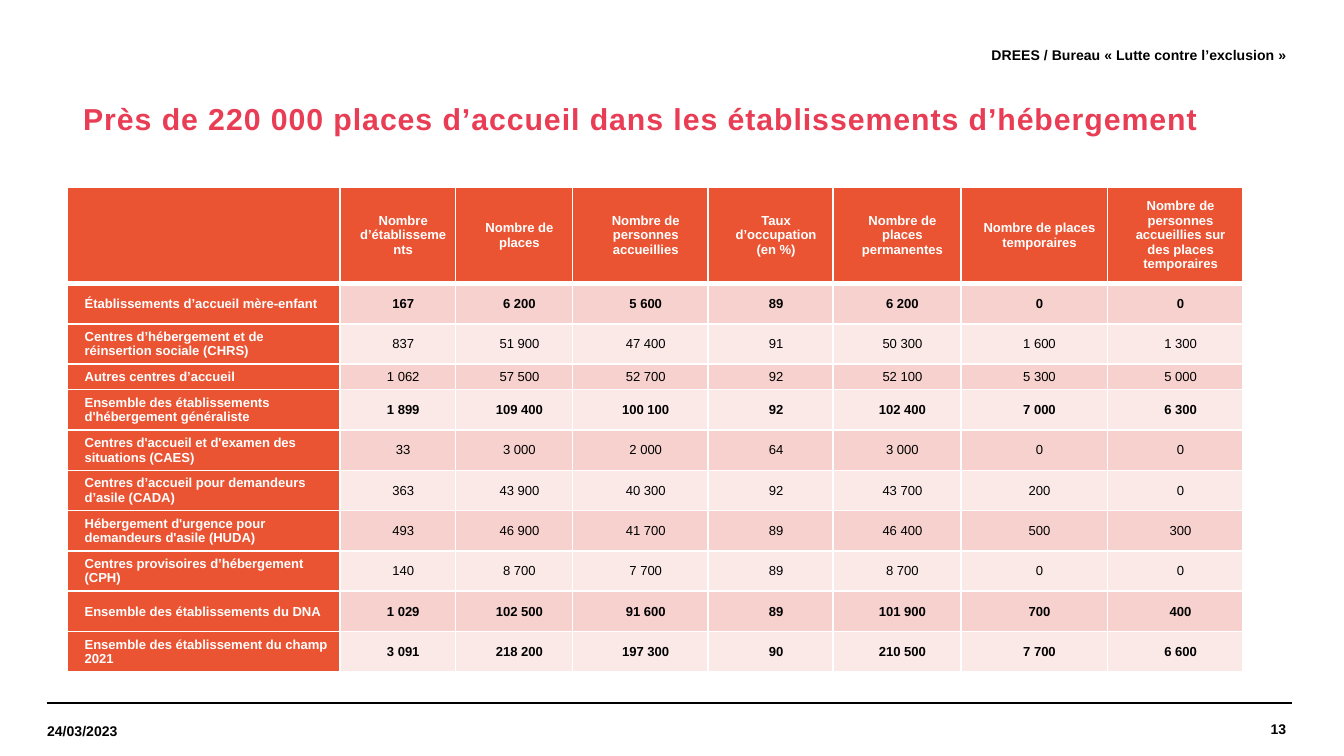
from lxml import etree
from pptx import Presentation
from pptx.dml.color import RGBColor
from pptx.enum.shapes import MSO_CONNECTOR
from pptx.enum.text import MSO_ANCHOR as Anchor, PP_ALIGN as Align
from pptx.oxml.ns import qn
from pptx.util import Inches, Pt

BLACK = RGBColor(0x00, 0x00, 0x00)
WHITE = RGBColor(0xFF, 0xFF, 0xFF)
RED = RGBColor(0xE8, 0x3D, 0x54)
ORANGE = RGBColor(0xEA, 0x54, 0x33)
BANDS = [RGBColor(0xF7, 0xD1, 0xCE), RGBColor(0xFB, 0xE9, 0xE8)]
FONT = "Arial"

COLUMN_WIDTHS = [2.03, 0.86, 0.87, 1.01, 0.93, 0.95, 1.09, 1.01]
HEADER_HEIGHT, ROW_HEIGHT, SHORT_ROW_HEIGHT = 0.72, 0.3, 0.19
SHORT_ROW = 3
HEADERS = [
    "", "Nombre d’établissements", "Nombre de places",
    "Nombre de personnes accueillies", "Taux d’occupation (en %)",
    "Nombre de places permanentes", "Nombre de places temporaires",
    "Nombre de personnes accueillies sur des places temporaires",
]
# Row label, values, and whether the values are bold
ROWS = [
    ("Établissements d’accueil mère-enfant",
     ["167", "6 200", "5 600", "89", "6 200", "0", "0"], True),
    ("Centres d’hébergement et de réinsertion sociale (CHRS)",
     ["837", "51 900", "47 400", "91", "50 300", "1 600", "1 300"], False),
    ("Autres centres d’accueil",
     ["1 062", "57 500", "52 700", "92", "52 100", "5 300", "5 000"], False),
    ("Ensemble des établissements d'hébergement généraliste",
     ["1 899", "109 400", "100 100", "92", "102 400", "7 000", "6 300"], True),
    ("Centres d'accueil et d'examen des situations (CAES)",
     ["33", "3 000", "2 000", "64", "3 000", "0", "0"], False),
    ("Centres d’accueil pour demandeurs d’asile (CADA)",
     ["363", "43 900", "40 300", "92", "43 700", "200", "0"], False),
    ("Hébergement d'urgence pour demandeurs d'asile (HUDA)",
     ["493", "46 900", "41 700", "89", "46 400", "500", "300"], False),
    ("Centres provisoires d’hébergement (CPH)",
     ["140", "8 700", "7 700", "89", "8 700", "0", "0"], False),
    ("Ensemble des établissements du DNA",
     ["1 029", "102 500", "91 600", "89", "101 900", "700", "400"], True),
    ("Ensemble des établissement du champ 2021",
     ["3 091", "218 200", "197 300", "90", "210 500", "7 700", "6 600"], True),
]


def write(paragraph, text, size, color, bold=True, align=Align.LEFT, indent=0):
    """Add one styled run to a paragraph."""
    paragraph.alignment = align
    paragraph._p.get_or_add_pPr().set("marL", str(Inches(indent)))
    run = paragraph.add_run()
    run.text = text
    run.font.name = FONT
    run.font.size = Pt(size)
    run.font.bold = bold
    run.font.color.rgb = color
    return run


def add_text_box(slide, left, top, width, height, margins=(0, 0)):
    """Add a wrapped, vertically centred box and return its paragraph."""
    shape = slide.shapes.add_textbox(
        Inches(left), Inches(top), Inches(width), Inches(height))
    frame = shape.text_frame
    frame.word_wrap = True
    frame.vertical_anchor = Anchor.MIDDLE
    frame.margin_left = frame.margin_right = Inches(margins[0])
    frame.margin_top = frame.margin_bottom = Inches(margins[1])
    return frame.paragraphs[0]


def add_title(slide, left, top, width, height):
    paragraph = add_text_box(slide, left, top, width, height, (0.1, 0.05))
    paragraph.line_spacing = 0.9
    run = write(
        paragraph,
        "Près de 220 000 places d’accueil dans les établissements d’hébergement",
        16.2, RED, indent=0.02)
    run.font._element.set("spc", "50")


def add_header(slide, left, top, width, height):
    paragraph = add_text_box(slide, left, top, width, height)
    write(paragraph, "DREES / Bureau « Lutte contre l’exclusion »", 7.5, BLACK,
          align=Align.RIGHT)


def add_footer(slide, left, top, width, height):
    # Two overlapping rules
    for offset in (0, 0.04):
        start = left + offset
        rule = slide.shapes.add_connector(
            MSO_CONNECTOR.STRAIGHT, Inches(start), Inches(top),
            Inches(start + width), Inches(top))
        rule.line.color.rgb = BLACK
        rule.line.width = Pt(0.8)
        etree.SubElement(rule._element.spPr, qn("a:effectLst"))
    # Date and page number
    date = add_text_box(slide, left, top + 0.02, 1.28, height - 0.01)
    write(date, "24/03/2023", 7.5, BLACK)
    number = add_text_box(slide, left + width - 1.48, top, 1.48, height)
    write(number, "13", 7.5, BLACK, align=Align.RIGHT)


def set_borders(cell, top, bottom):
    """Draw white borders; top and bottom widths are in points."""
    properties = cell._tc.get_or_add_tcPr()
    for side, width in (("L", 1), ("R", 1), ("T", top), ("B", bottom)):
        line = etree.SubElement(properties, qn(f"a:ln{side}"), w=str(Pt(width)))
        fill = etree.SubElement(line, qn("a:solidFill"))
        etree.SubElement(fill, qn("a:srgbClr"), val=str(WHITE))


def add_places_table(slide, left, top, width, height):
    table = slide.shapes.add_table(
        len(ROWS) + 1, len(HEADERS), Inches(left), Inches(top),
        Inches(width), Inches(height)).table
    table.horz_banding = False
    for column, column_width in zip(table.columns, COLUMN_WIDTHS):
        column.width = Inches(column_width)
    for row in table.rows:
        row.height = Inches(ROW_HEIGHT)
    table.rows[0].height = Inches(HEADER_HEIGHT)
    table.rows[SHORT_ROW].height = Inches(SHORT_ROW_HEIGHT)

    content = [(HEADERS, True)]
    content += [([label] + values, bold) for label, values, bold in ROWS]
    for row_index, (texts, bold) in enumerate(content):
        for column_index, text in enumerate(texts):
            is_label = column_index == 0
            is_heading = is_label or row_index == 0
            cell = table.cell(row_index, column_index)
            set_borders(cell, 3 if row_index == 1 else 1,
                        3 if row_index == 0 else 1)
            cell.fill.solid()
            cell.fill.fore_color.rgb = (
                ORANGE if is_heading else BANDS[(row_index - 1) % 2])
            cell.vertical_anchor = Anchor.MIDDLE
            cell.margin_left = cell.margin_right = Inches(0.05)
            cell.margin_top = cell.margin_bottom = Inches(0.03)
            if text:
                write(cell.text_frame.paragraphs[0], text, 7,
                      WHITE if is_heading else BLACK, bold or is_label,
                      Align.LEFT if is_label else Align.CENTER, 0.08)


def main():
    presentation = Presentation()
    # Widescreen, 16:9
    presentation.slide_width = Inches(10)
    presentation.slide_height = Inches(10 * 9 / 16)
    slide = presentation.slides.add_slide(presentation.slide_layouts[6])
    add_footer(slide, 0.35, 5.23, 9.22, 0.39)
    add_header(slide, 3.14, 0.21, 6.43, 0.39)
    add_title(slide, 0.5, 0.6, 9.21, 0.59)
    add_places_table(slide, 0.5, 1.39, 8.74, 3.62)
    presentation.save("out.pptx")


if __name__ == "__main__":
    main()
